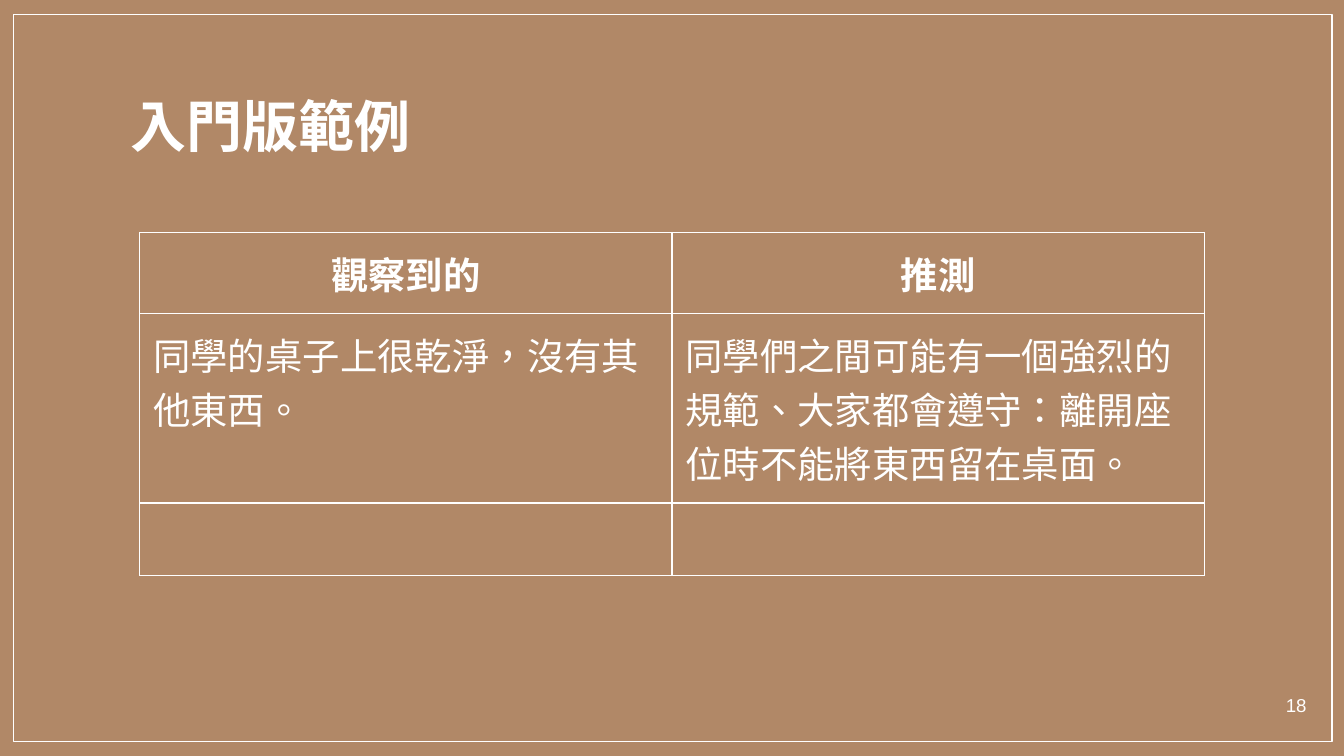
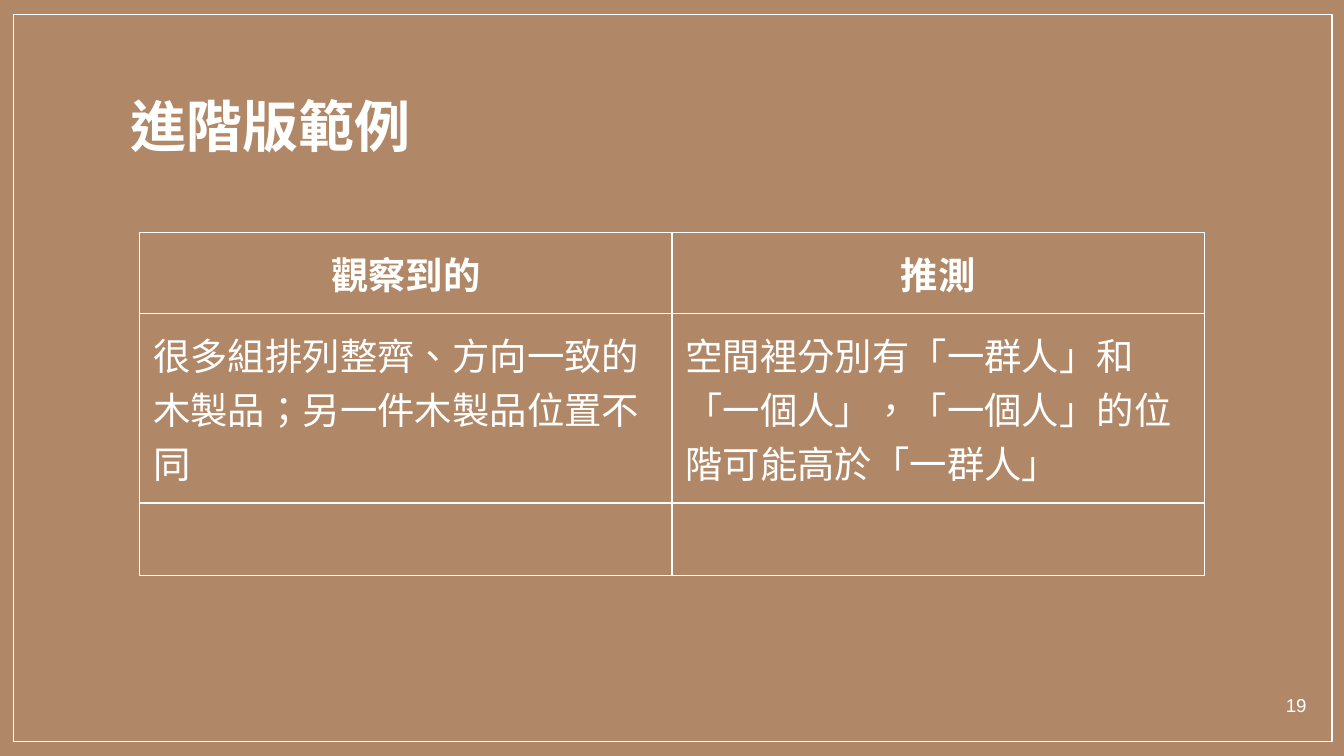
"""Build two slides that set observations beside inferences."""
from lxml.etree import SubElement
from pptx import Presentation
from pptx.dml.color import RGBColor
from pptx.enum.shapes import MSO_SHAPE
from pptx.enum.text import MSO_ANCHOR, PP_ALIGN
from pptx.oxml.ns import qn
from pptx.util import Inches, Pt

BROWN = RGBColor(0xB1, 0x88, 0x67)
WHITE = RGBColor(0xFF, 0xFF, 0xFF)
FONT = "Arial"
LANG = "zh-TW"
LINE = Pt(0.75)
PAD = Inches(0.1)
COL_W = Inches(3.96)
ROW_H = [Inches(0.59), Inches(0.9), Inches(0.54)]
HEADS = ["觀察到的", "推測"]
FIRST_NUMBER = 18
SLIDES = [
    ("入門版範例", ["同學的桌子上很乾淨，沒有其他東西。",
               "同學們之間可能有一個強烈的規範、大家都會遵守：離開座位時不能將東西留在桌面。"]),
    ("進階版範例", ["很多組排列整齊、方向一致的木製品；另一件木製品位置不同",
               "空間裡分別有「一群人」和「一個人」，「一個人」的位階可能高於「一群人」"]),
]


def write(tf, text, size, bold=False, align=PP_ALIGN.LEFT, pad=PAD):
    tf.margin_left = tf.margin_right = tf.margin_top = tf.margin_bottom = pad
    p = tf.paragraphs[0]
    p.alignment = align
    r = p.add_run()
    r.text = text
    r.font.name = FONT
    r.font.size = Pt(size)
    r.font.bold = bold
    r.font.color.rgb = WHITE
    r._r.get_or_add_rPr().set("lang", LANG)
    return p


def outline(cell):
    tcPr = cell._tc.get_or_add_tcPr()
    for side in ("a:lnL", "a:lnR", "a:lnT", "a:lnB"):
        ln = SubElement(tcPr, qn(side), w=str(LINE))
        fill = SubElement(ln, qn("a:solidFill"))
        SubElement(fill, qn("a:srgbClr"), val=str(WHITE))
    cell.fill.background()


prs = Presentation()
prs.slide_width = Inches(10)
prs.slide_height = prs.slide_width * 9 // 16

for number, (title, body) in enumerate(SLIDES, FIRST_NUMBER):
    s = prs.slides.add_slide(prs.slide_layouts[5])
    s.background.fill.solid()
    s.background.fill.fore_color.rgb = BROWN

    frame = s.shapes.add_shape(MSO_SHAPE.RECTANGLE, Inches(0.1), Inches(0.11),
                               Inches(9.81), Inches(5.41))
    frame.shadow.inherit = False
    frame.fill.background()
    frame.line.color.rgb = WHITE
    frame.line.width = LINE

    sp = s.shapes.title
    sp.left, sp.top, sp.width, sp.height = (Inches(n) for n in (0.97, 0.75, 7.03, 0.43))
    sp.text_frame.vertical_anchor = MSO_ANCHOR.MIDDLE
    p = write(sp.text_frame, title, 30, bold=True, pad=0)
    p.line_spacing = 0.9

    table = s.shapes.add_table(len(ROW_H), len(HEADS), Inches(1.04), Inches(1.73),
                               COL_W * len(HEADS), sum(ROW_H)).table
    table.first_row = table.horz_banding = False
    for row, height in zip(table.rows, ROW_H):
        row.height = height
    for c, (head, text) in enumerate(zip(HEADS, body)):
        table.columns[c].width = COL_W
        for r in range(len(ROW_H)):
            cell = table.cell(r, c)
            outline(cell)
            cell.margin_left = cell.margin_right = PAD
            cell.margin_top = cell.margin_bottom = PAD
        write(table.cell(0, c).text_frame, head, 20, bold=True, align=PP_ALIGN.CENTER)
        write(table.cell(1, c).text_frame, text, 20)

    sp = s.shapes.add_textbox(Inches(9.32), Inches(5.08), Inches(0.5), Inches(0.32))
    sp.text_frame.word_wrap = True
    write(sp.text_frame, str(number), 10, align=PP_ALIGN.RIGHT)

prs.save("out.pptx")
